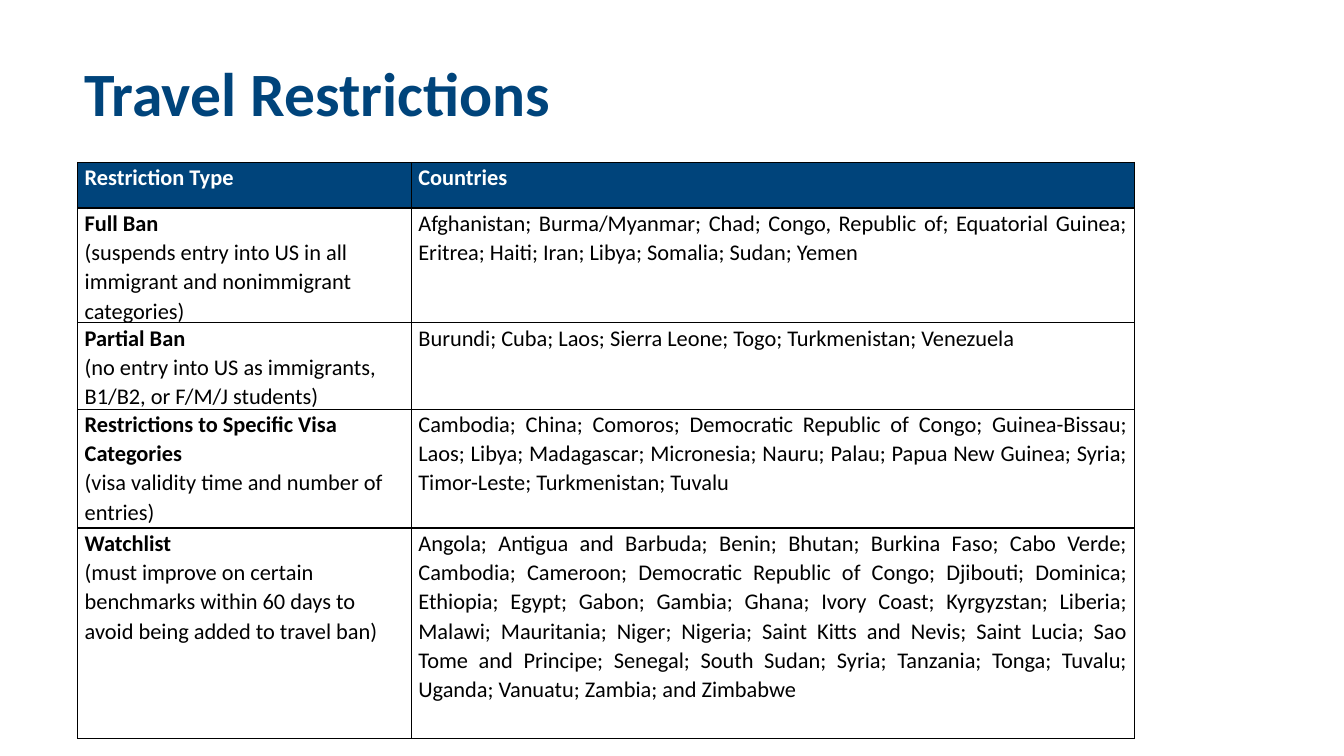
import pptx
import pptx.dml.color
import pptx.enum.text
import pptx.oxml
import pptx.oxml.ns
import pptx.util

NAVY, WHITE, BLACK = "00447B", "FFFFFF", "000000"
ALIGN = pptx.enum.text.PP_ALIGN

HEADINGS = ("Restriction Type", "Countries")
RESTRICTIONS = [
    ("Full Ban",
     "(suspends entry into US in all immigrant and nonimmigrant categories)",
     "Afghanistan; Burma/Myanmar; Chad; Congo, Republic of; Equatorial Guinea; "
     "Eritrea; Haiti; Iran; Libya; Somalia; Sudan; Yemen"),
    ("Partial Ban",
     "(no entry into US as immigrants, B1/B2, or F/M/J students)",
     "Burundi; Cuba; Laos; Sierra Leone; Togo; Turkmenistan; Venezuela"),
    ("Restrictions to Specific Visa Categories",
     "(visa validity time and number of entries)",
     "Cambodia; China; Comoros; Democratic Republic of Congo; Guinea-Bissau; Laos; "
     "Libya; Madagascar; Micronesia; Nauru; Palau; Papua New Guinea; Syria; "
     "Timor-Leste; Turkmenistan; Tuvalu"),
    ("Watchlist",
     "(must improve on certain benchmarks within 60 days to avoid being added to travel ban)",
     "Angola; Antigua and Barbuda; Benin; Bhutan; Burkina Faso; Cabo Verde; Cambodia; "
     "Cameroon; Democratic Republic of Congo; Djibouti; Dominica; Ethiopia; Egypt; "
     "Gabon; Gambia; Ghana; Ivory Coast; Kyrgyzstan; Liberia; Malawi; Mauritania; "
     "Niger; Nigeria; Saint Kitts and Nevis; Saint Lucia; Sao Tome and Principe; "
     "Senegal; South Sudan; Syria; Tanzania; Tonga; Tuvalu; Uganda; Vanuatu; Zambia; "
     "and Zimbabwe"),
]


def color(value):
    return pptx.dml.color.RGBColor.from_string(value)


class SlideBuilder:
    """Draws styled elements on one slide, with lengths in percent of its size."""

    font_name = "Calibri"

    def __init__(self, presentation):
        self.width = presentation.slide_width
        self.height = presentation.slide_height
        self.slide = presentation.slides.add_slide(presentation.slide_layouts[6])

    def across(self, share):
        return round(self.width * share / 100)

    def down(self, share):
        return round(self.height * share / 100)

    def set_text(self, frame, lines, size, ink, spacing, alignment=ALIGN.LEFT):
        frame.word_wrap = True
        for index, (text, bold) in enumerate(lines):
            paragraph = frame.add_paragraph() if index else frame.paragraphs[0]
            paragraph.text = text
            paragraph.alignment = alignment
            paragraph.line_spacing = spacing
            font = paragraph.font
            font.name, font.size, font.bold = self.font_name, pptx.util.Pt(size), bold
            font.color.rgb = color(ink)

    def title(self, text, left, top, width, height):
        box = self.slide.shapes.add_textbox(
            self.across(left), self.down(top), self.across(width), self.down(height))
        box.text_frame.vertical_anchor = pptx.enum.text.MSO_ANCHOR.MIDDLE
        self.set_text(box.text_frame, [(text, True)], 44, NAVY, 0.9)

    def table(self, left, top, columns, rows):
        frame = self.slide.shapes.add_table(
            len(rows), len(columns), self.across(left), self.down(top),
            self.across(sum(columns)), self.down(sum(rows)))
        table = frame.table
        table.first_row = table.horz_banding = False
        for column, share in zip(table.columns, columns):
            column.width = self.across(share)
        for row, share in zip(table.rows, rows):
            row.height = self.down(share)
        return table

    def cell(self, cell, lines, ink=BLACK, fill=None, alignment=ALIGN.LEFT):
        cell.margin_left = cell.margin_right = pptx.util.Inches(0.07)
        cell.margin_top = cell.margin_bottom = 0
        self.set_text(cell.text_frame, lines, 16, ink, 1.07, alignment)
        self.borders(cell)
        if fill:
            cell.fill.solid()
            cell.fill.fore_color.rgb = color(fill)
        else:
            cell.fill.background()

    def borders(self, cell):
        properties = cell._tc.get_or_add_tcPr()
        for side in ("lnL", "lnR", "lnT", "lnB"):
            properties.append(pptx.oxml.parse_xml(
                f'<a:{side} {pptx.oxml.ns.nsdecls("a")} w="{pptx.util.Pt(1)}">'
                f'<a:solidFill><a:srgbClr val="{BLACK}"/></a:solidFill></a:{side}>'))


def main():
    presentation = pptx.Presentation()
    presentation.slide_width = pptx.util.Inches(13.33)
    presentation.slide_height = pptx.util.Inches(7.5)

    builder = SlideBuilder(presentation)
    builder.title("Travel Restrictions", 5.55, 5.33, 87.6, 14.8)
    table = builder.table(5.78, 21.5, (24.83, 53.8), (6, 14.93, 11.2, 15.73, 27.87))

    for column, heading in enumerate(HEADINGS):
        builder.cell(table.cell(0, column), [(heading, True)], WHITE, NAVY, ALIGN.JUSTIFY)
    for row, (name, scope, countries) in enumerate(RESTRICTIONS, start=1):
        builder.cell(table.cell(row, 0), [(name, True), (scope, False)])
        builder.cell(table.cell(row, 1), [(countries, False)], alignment=ALIGN.JUSTIFY)

    presentation.save("out.pptx")


if __name__ == "__main__":
    main()
